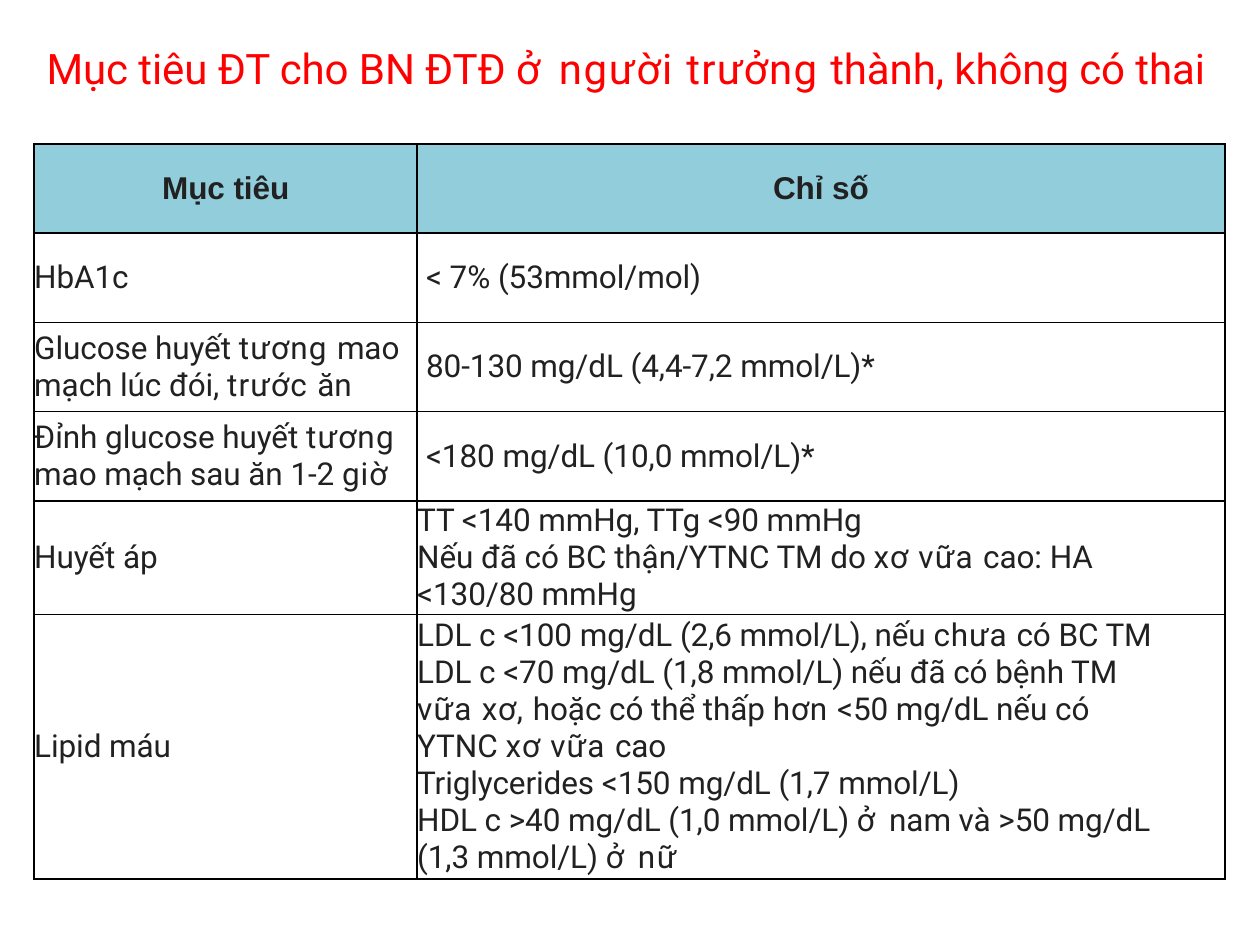
from itertools import groupby

from lxml import etree
from pptx import Presentation
from pptx.dml.color import RGBColor
from pptx.enum.text import MSO_ANCHOR, PP_ALIGN
from pptx.oxml.ns import qn
from pptx.util import Cm, Pt

MIDDLE = MSO_ANCHOR.MIDDLE
LEFT, CENTER = PP_ALIGN.LEFT, PP_ALIGN.CENTER
BODY_FONT, HEADER_FONT = "Roboto", "Arial"
RED, INK, TEAL, BLACK = "FF0000", "212121", "92CDDC", "000000"

WORD_TRACKING_EM = {
    "ở": 0.1, "người": 0.04, "trưởng": 0.03, "tương": 0.04, "trước": 0.04,
    "giờ": 0.03, "xơ": 0.04, "xơ,": 0.03, "vữa": 0.04, "chưa": 0.03,
    "hơn": 0.03, "nữ": 0.05,
}
DEFAULT_TRACKING_PT = -0.05

TITLE = "Mục tiêu ĐT cho BN ĐTĐ ở người trưởng thành, không có thai"
HEADERS = ("Mục tiêu", "Chỉ số")
TARGETS = [
    (["HbA1c"], ["< 7% (53mmol/mol)"]),
    (["Glucose huyết tương mao mạch lúc đói, trước ăn"],
     ["80-130 mg/dL (4,4-7,2 mmol/L)*"]),
    (["Đỉnh glucose huyết tương", "mao mạch sau ăn 1-2 giờ"],
     ["<180 mg/dL (10,0 mmol/L)*"]),
    (["Huyết áp"],
     ["TT <140 mmHg, TTg <90 mmHg",
      "Nếu đã có BC thận/YTNC TM do xơ vữa cao: HA",
      "<130/80 mmHg"]),
    (["Lipid máu"],
     ["LDL c <100 mg/dL (2,6 mmol/L), nếu chưa có BC TM",
      "LDL c <70 mg/dL (1,8 mmol/L) nếu đã có bệnh TM vữa xơ, "
      "hoặc có thể thấp hơn <50 mg/dL nếu có YTNC xơ vữa cao",
      "Triglycerides <150 mg/dL (1,7 mmol/L)",
      "HDL c >40 mg/dL (1,0 mmol/L) ở nam và >50 mg/dL (1,3 mmol/L) ở nữ"]),
]
COLUMN_WIDTHS = (7.72, 16.28)
ROW_HEIGHTS = (1.8, 1.8, 1.8, 1.8, 2.29, 5.33)


def rgb(color):
    """Return the colour for a hex string."""
    return RGBColor.from_string(color)


def write_lines(frame, lines, size, color, font=BODY_FONT, bold=False, align=LEFT):
    """Write one paragraph per line, tracking each word by its rule."""
    for index, line in enumerate(lines):
        paragraph = frame.paragraphs[0] if index == 0 else frame.add_paragraph()
        paragraph.alignment = align
        paragraph.font.name = font
        paragraph.font.size = Pt(size)
        paragraph.font.bold = bold
        paragraph.font.color.rgb = rgb(color)
        groups = groupby(line.split(), key=WORD_TRACKING_EM.get)
        phrases = [(em, " ".join(words)) for em, words in groups]
        for position, (em, phrase) in enumerate(phrases):
            run = paragraph.add_run()
            run.text = phrase if position == len(phrases) - 1 else phrase + " "
            tracking = DEFAULT_TRACKING_PT if em is None else em * size
            run._r.get_or_add_rPr().set("spc", str(round(tracking * 100)))


def add_borders(cell, color, width):
    """Draw a solid line on all four sides of a cell."""
    properties = cell._tc.get_or_add_tcPr()
    for side in ("a:lnL", "a:lnR", "a:lnT", "a:lnB"):
        line = etree.SubElement(properties, qn(side), w=str(Pt(width)))
        fill = etree.SubElement(line, qn("a:solidFill"))
        etree.SubElement(fill, qn("a:srgbClr"), val=color)


def style_cell(cell, fill=None, left=0, right=0):
    """Set the borders, fill, margins and anchor of a cell."""
    add_borders(cell, BLACK, 1)
    if fill:
        cell.fill.solid()
        cell.fill.fore_color.rgb = rgb(fill)
    else:
        cell.fill.background()
    cell.margin_left, cell.margin_right = Cm(left), Cm(right)
    cell.margin_top = cell.margin_bottom = 0
    cell.vertical_anchor = MIDDLE


def add_title(slide, left, top, width, height):
    """Place the red heading in the given box."""
    frame = slide.shapes.add_textbox(Cm(left), Cm(top), Cm(width), Cm(height)).text_frame
    frame.margin_left = frame.margin_right = frame.margin_bottom = 0
    frame.margin_top = Cm(0.06)
    frame.word_wrap = False
    write_lines(frame, [TITLE], 24, RED)


def add_targets_table(slide, left, top):
    """Place the table of treatment targets from the given corner."""
    table = slide.shapes.add_table(
        len(ROW_HEIGHTS), len(COLUMN_WIDTHS), Cm(left), Cm(top),
        Cm(sum(COLUMN_WIDTHS)), Cm(sum(ROW_HEIGHTS))).table
    table.first_row = table.horz_banding = False
    for column, width in zip(table.columns, COLUMN_WIDTHS):
        column.width = Cm(width)
    for row, height in zip(table.rows, ROW_HEIGHTS):
        row.height = Cm(height)
    for column, header in enumerate(HEADERS):
        cell = table.cell(0, column)
        style_cell(cell, fill=TEAL)
        write_lines(cell.text_frame, [header], 18, INK, HEADER_FONT, True, CENTER)
    for row, (goal, values) in enumerate(TARGETS, start=1):
        goal_cell, value_cell = table.cell(row, 0), table.cell(row, 1)
        single = len(values) == 1
        style_cell(goal_cell)
        style_cell(value_cell, left=0.18 if single else 0, right=0 if single else 1.1)
        write_lines(goal_cell.text_frame, goal, 18, INK)
        write_lines(value_cell.text_frame, values, 18, INK)


def main():
    """Build the slide and save it."""
    deck = Presentation()
    deck.slide_width, deck.slide_height = Cm(25.4), Cm(19.05)
    slide = deck.slides.add_slide(deck.slide_layouts[6])
    add_targets_table(slide, 0.69, 2.9)
    add_title(slide, 0.94, 0.79, 23.57, 1.09)
    deck.save("out.pptx")


if __name__ == "__main__":
    main()
